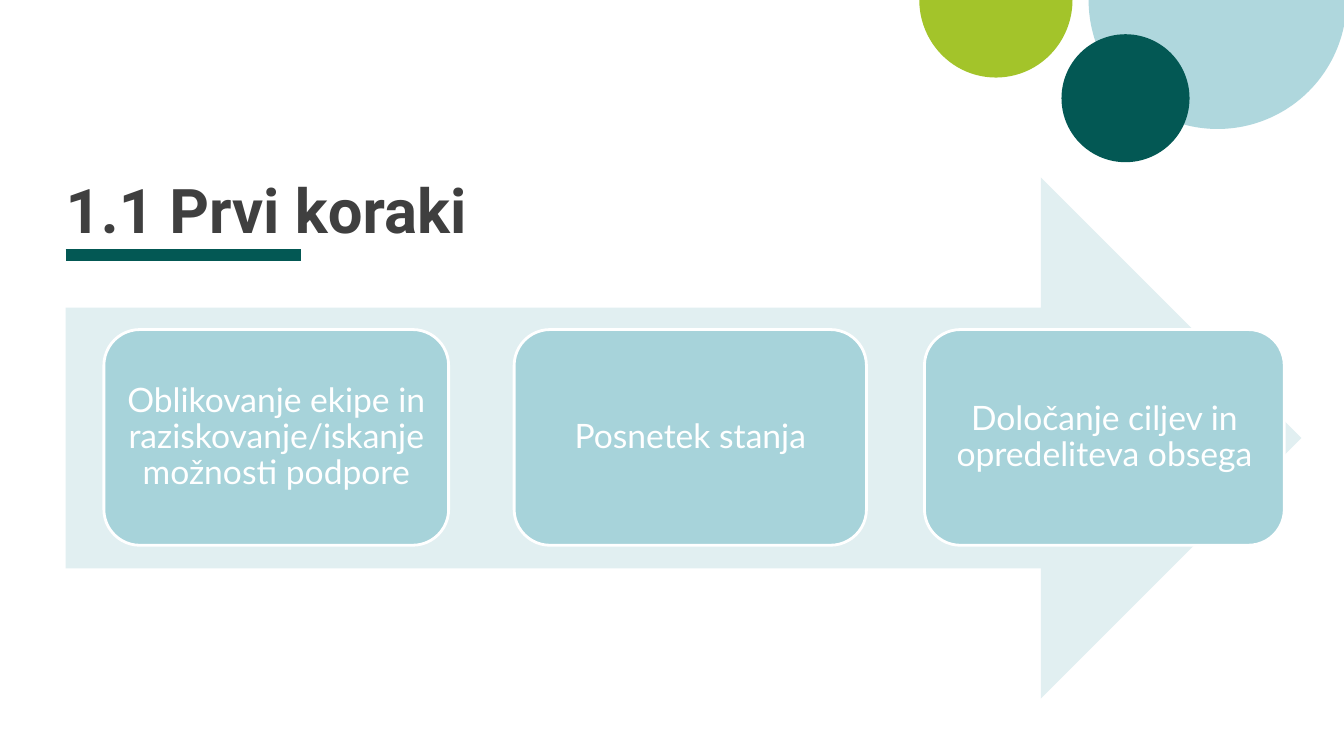
from dataclasses import dataclass
from lxml import etree
from pptx import Presentation, util as u
from pptx.dml.color import RGBColor
from pptx.enum import shapes, text
from pptx.oxml.ns import qn


@dataclass(frozen=True)
class Theme:
    dark: str = "035854"
    lime: str = "A3C42A"
    sky: str = "AFD7DD"
    pale: str = "E1EFF1"
    card: str = "A7D3DA"
    ink: str = "3F3F3F"
    white: str = "FFFFFF"
    head: str = "Roboto"
    body: str = "Lato"
    big: int = 44
    mid: int = 24
    rule: int = 8
    edge: int = 2


T = Theme()
WIDE, HIGH = u.Inches(13.333), u.Inches(7.5)
KIND = shapes.MSO_SHAPE


def part(box, left, top, wide, high):
    x, y, w, h = box
    return (round(x + w * left / 100), round(y + h * top / 100),
            round(w * wide / 100), round(h * high / 100))


def rgb(code):
    return RGBColor.from_string(code)


def draw(slide, kind, box, fill, edge=None):
    shape = slide.shapes.add_shape(kind, *box)
    shape.shadow.inherit = False
    shape.fill.solid()
    shape.fill.fore_color.rgb = rgb(fill)
    if edge:
        shape.line.color.rgb = rgb(edge)
        shape.line.width = u.Pt(T.edge)
    else:
        shape.line.fill.background()
    return shape


def write(shape, words, face, size, color, anchor, align, space, inset=0, bold=False):
    frame = shape.text_frame
    frame.word_wrap = True
    frame.vertical_anchor = anchor
    frame.margin_left = frame.margin_right = u.Inches(inset)
    frame.margin_top = frame.margin_bottom = u.Inches(inset)
    para = frame.paragraphs[0]
    para.alignment = align
    para.line_spacing = space
    run = para.add_run()
    run.text = words
    run.font.name = face
    run.font.size = u.Pt(size)
    run.font.bold = bold
    run.font.color.rgb = rgb(color)


def discs(slide, box):
    halves = (
        ((81, -17.07, 19.2, 34.13), T.sky),
        ((68.4, -10.27, 11.4, 20.53), T.lime),
    )
    for place, fill in halves:
        half = draw(slide, KIND.PIE, part(box, *place), fill)
        half.adjustments[0] = 0
        half.adjustments[1] = 108
    draw(slide, KIND.OVAL, part(box, 78.98, 4.53, 9.53, 16.93), T.dark)


def title(slide, box, words):
    x, y, w, h = box
    level = round(y + h * 1.17)
    rule = slide.shapes.add_connector(
        shapes.MSO_CONNECTOR.STRAIGHT, x, level, round(x + w * 0.193), level)
    rule.line.color.rgb = rgb(T.dark)
    rule.line.width = u.Pt(T.rule)
    etree.SubElement(rule._element.spPr, qn("a:effectLst"))
    write(slide.shapes.add_textbox(*box), words, T.head, T.big, T.ink,
          text.MSO_ANCHOR.BOTTOM, text.PP_ALIGN.LEFT, 0.8, bold=True)


def steps(slide, box, names):
    draw(slide, KIND.RIGHT_ARROW, box, T.pale)
    for i, name in enumerate(names):
        place = part(box, 3.1 + 33.2 * i, 29.2, 27.9 + 0.61 * i, 41.4)
        card = draw(slide, KIND.ROUNDED_RECTANGLE, place, T.card, T.white)
        write(card, name, T.body, T.mid, T.white,
              text.MSO_ANCHOR.MIDDLE, text.PP_ALIGN.CENTER, 0.9, 0.09)


def main():
    deck = Presentation()
    deck.slide_width, deck.slide_height = WIDE, HIGH
    slide = deck.slides.add_slide(deck.slide_layouts[6])
    page = (0, 0, WIDE, HIGH)
    discs(slide, page)
    title(slide, part(page, 4.88, 24.53, 90.68, 7.87), "1.1 Prvi koraki")
    steps(slide, part(page, 4.88, 23.47, 91.95, 68.93), (
        "Oblikovanje ekipe in raziskovanje/iskanje možnosti podpore",
        "Posnetek stanja",
        "Določanje ciljev in opredeliteva obsega",
    ))
    deck.save("out.pptx")


if __name__ == "__main__":
    main()
